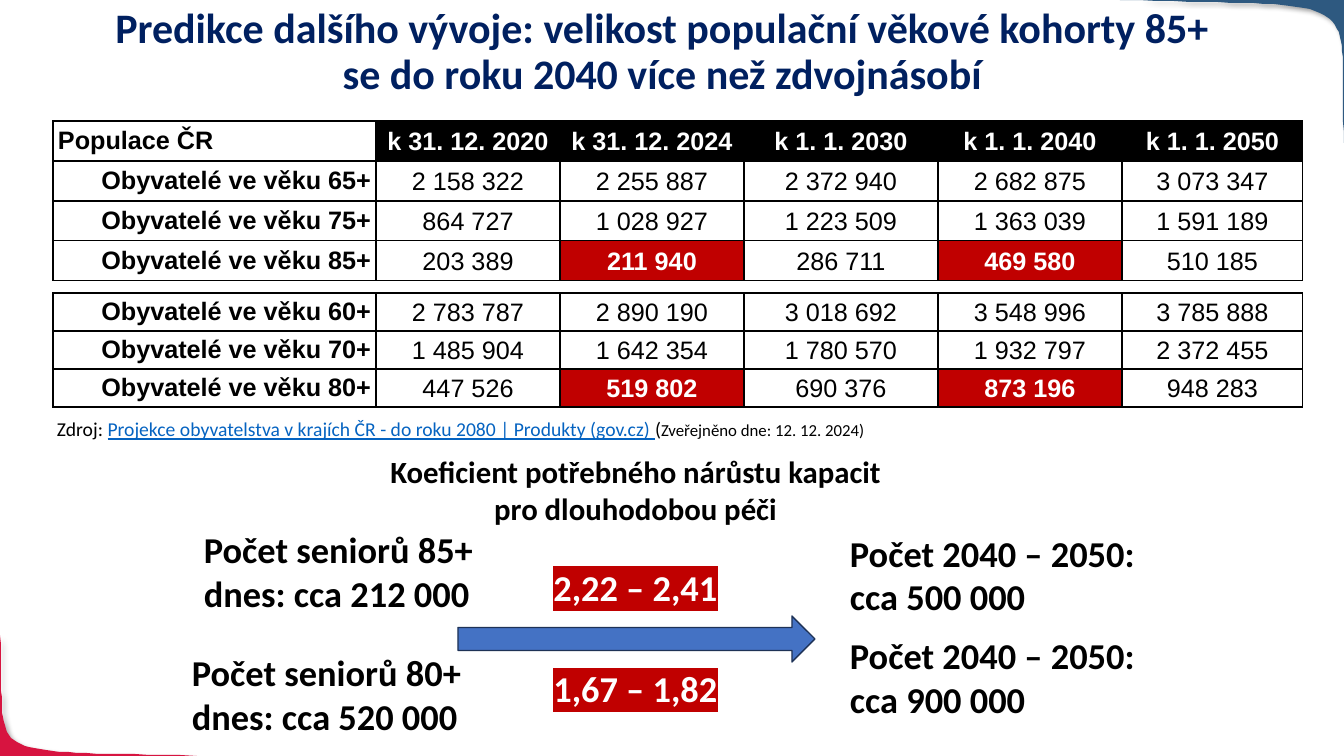
"""Build a slide on the growth of the 85+ population cohort in Czechia."""
from lxml.etree import SubElement
from pptx import Presentation
from pptx.dml.color import RGBColor as RGB
from pptx.enum.shapes import MSO_SHAPE as SHAPE
from pptx.enum.text import MSO_ANCHOR as ANCHOR, PP_ALIGN as ALIGN
from pptx.oxml import parse_xml
from pptx.oxml.ns import nsdecls, qn
from pptx.util import Pt

PX = 914400 / 100.8
THEME = {
    "navy": "002060", "black": "000000", "white": "FFFFFF", "red": "C00000",
    "link": "0563C1", "arrow": "4472C4", "arrow_line": "1E3256",
    "corner_red": "D71440", "corner_blue": "2E5980",
    "body": "Calibri", "table": "Arial",
    "title_size": 30, "big_size": 26, "heading_size": 22,
    "table_size": 18, "source_size": 14, "note_size": 12,
}


def px(*lengths):
    """Turn pixel lengths into EMU."""
    return [round(length * PX) for length in lengths]


def write(para, text, size="big_size", color="black", font="body", bold=True,
          underline=False, highlight=None, align=ALIGN.LEFT):
    """Add a formatted span to a paragraph."""
    para.alignment = align
    span = para.add_run()
    span.text = text
    span.font.size = Pt(THEME[size])
    span.font.name = THEME[font]
    span.font.bold = bold
    span.font.underline = underline
    span.font.color.rgb = RGB.from_string(THEME[color])
    if highlight:
        fill = span.font._element.find(qn("a:solidFill"))
        fill.addnext(parse_xml(
            f'<a:highlight {nsdecls("a")}><a:srgbClr val="{THEME[highlight]}"/></a:highlight>'))


deck = Presentation()
deck.slide_width, deck.slide_height = px(1344, 756)
page = deck.slides.add_slide(deck.slide_layouts[6])

corners = [
    ("corner_red", [(215, 756), (-34, 750), (8, 765), (0, 635)], (0, 756)),
    ("corner_blue", [(1120, 0), (1381, 7), (1337, -10), (1344, 143)], (1344, 0)),
]
for color, curve, tip in corners:
    outline = []
    for step in range(41):
        t = step / 40
        weights = [(1 - t) ** 3, 3 * t * (1 - t) ** 2, 3 * t * t * (1 - t), t ** 3]
        outline.append(tuple(sum(w * point[axis] for w, point in zip(weights, curve))
                             for axis in (0, 1)))
    builder = page.shapes.build_freeform(*outline[0], scale=PX)
    builder.add_line_segments(outline[1:] + [tip], close=True)
    corner = builder.convert_to_shape()
    corner.fill.solid()
    corner.fill.fore_color.rgb = RGB.from_string(THEME[color])
    corner.line.fill.background()
    corner._element.spPr.append(parse_xml(
        f'<a:effectLst {nsdecls("a")}><a:outerShdw blurRad="50800" dist="38100" dir="2700000">'
        '<a:srgbClr val="000000"><a:alpha val="40000"/></a:srgbClr></a:outerShdw></a:effectLst>'))

column_widths = [323, 184, 184, 194, 184, 181]
marked_columns = (2, 4)
tables = [
    (121, 40, [
        ["Populace ČR", "k 31. 12. 2020", "k 31. 12. 2024", "k 1. 1. 2030", "k 1. 1. 2040", "k 1. 1. 2050"],
        ["Obyvatelé ve věku 65+", "2 158 322", "2 255 887", "2 372 940", "2 682 875", "3 073 347"],
        ["Obyvatelé ve věku 75+", "864 727", "1 028 927", "1 223 509", "1 363 039", "1 591 189"],
        ["Obyvatelé ve věku 85+", "203 389", "211 940", "286 711", "469 580", "510 185"],
    ]),
    (293, 38, [
        ["Obyvatelé ve věku 60+", "2 783 787", "2 890 190", "3 018 692", "3 548 996", "3 785 888"],
        ["Obyvatelé ve věku 70+", "1 485 904", "1 642 354", "1 780 570", "1 932 797", "2 372 455"],
        ["Obyvatelé ve věku 80+", "447 526", "519 802", "690 376", "873 196", "948 283"],
    ]),
]
for top, row_height, rows in tables:
    frame = page.shapes.add_table(len(rows), len(column_widths),
                                  *px(53, top, sum(column_widths), row_height * len(rows)))
    table = frame.table
    table.first_row = table.horz_banding = False
    for column, width in zip(table.columns, column_widths):
        column.width = px(width)[0]
    for r, values in enumerate(rows):
        table.rows[r].height = px(row_height)[0]
        for c, value in enumerate(values):
            cell = table.cell(r, c)
            label = c == 0
            header = values[0] == "Populace ČR"
            marked = r == len(rows) - 1 and c in marked_columns
            cell.vertical_anchor = ANCHOR.MIDDLE
            cell.margin_left, cell.margin_right = px(5, 5) if label else px(1, 1)
            cell.margin_top, cell.margin_bottom = px(4, 4) if label else px(1, 0)
            for side in ("lnL", "lnR", "lnT", "lnB"):
                border = SubElement(cell._tc.get_or_add_tcPr(), qn(f"a:{side}"), w="12700")
                paint = SubElement(border, qn("a:solidFill"))
                SubElement(paint, qn("a:srgbClr"), val=THEME["black"])
            if header and label:
                cell.fill.background()
            else:
                back = "black" if header else "red" if marked else "white"
                cell.fill.solid()
                cell.fill.fore_color.rgb = RGB.from_string(THEME[back])
            align = ALIGN.CENTER
            if label:
                align = ALIGN.LEFT if header else ALIGN.RIGHT
            write(cell.text_frame.paragraphs[0], value, size="table_size", font="table",
                  color="white" if marked or header and not label else "black",
                  bold=label or header or marked, align=align)

arrow = page.shapes.add_shape(SHAPE.RIGHT_ARROW, *px(458, 616, 357, 46))
arrow.shadow.inherit = False
arrow.fill.solid()
arrow.fill.fore_color.rgb = RGB.from_string(THEME["arrow"])
arrow.line.color.rgb = RGB.from_string(THEME["arrow_line"])
arrow.line.width = Pt(1)

title = {"size": "title_size", "color": "navy", "align": ALIGN.CENTER}
heading = {"size": "heading_size", "align": ALIGN.CENTER}
ratio = {"color": "white", "highlight": "red", "align": ALIGN.CENTER}
source = {"size": "source_size", "bold": False}
texts = [
    ((83, 6, 1159, 94), [
        [("Predikce dalšího vývoje: velikost populační věkové kohorty 85+", title)],
        [("se do roku 2040 více než zdvojnásobí", title)]]),
    ((47, 412, 1262, 34), [[
        ("Zdroj: ", source),
        ("Projekce obyvatelstva v krajích ČR - do roku 2080 | Produkty (gov.cz) ",
         {**source, "color": "link", "underline": True}),
        ("(", source),
        ("Zveřejněno dne: 12. 12. 2024)", {**source, "size": "note_size"})]]),
    ((309, 448, 653, 166), [
        [("Koeficient potřebného nárůstu kapacit", heading)],
        [("pro dlouhodobou péči", heading)],
        [("2,22 – 2,41", ratio)]]),
    ((309, 661, 653, 54), [[("1,67 – 1,82", ratio)]]),
    ((194, 522, 402, 99), [[("Počet seniorů 85+", {})], [("dnes: cca 212 000", {})]]),
    ((182, 645, 402, 99), [[("Počet seniorů 80+", {})], [("dnes: cca 520 000", {})]]),
    ((840, 526, 448, 99), [[("Počet 2040 – 2050:", {})], [("cca 500 000", {})]]),
    ((840, 628, 448, 99), [[("Počet 2040 – 2050:", {})], [("cca 900 000", {})]]),
]
for place, lines in texts:
    box = page.shapes.add_textbox(*px(*place))
    box.text_frame.word_wrap = True
    for index, spans in enumerate(lines):
        para = box.text_frame.paragraphs[0] if index == 0 else box.text_frame.add_paragraph()
        for text, style in spans:
            write(para, text, **style)
            if style is title:
                para.line_spacing = 0.9
                box.text_frame.vertical_anchor = ANCHOR.MIDDLE
        if index == 2:
            para.space_before = Pt(27)

deck.save("out.pptx")
